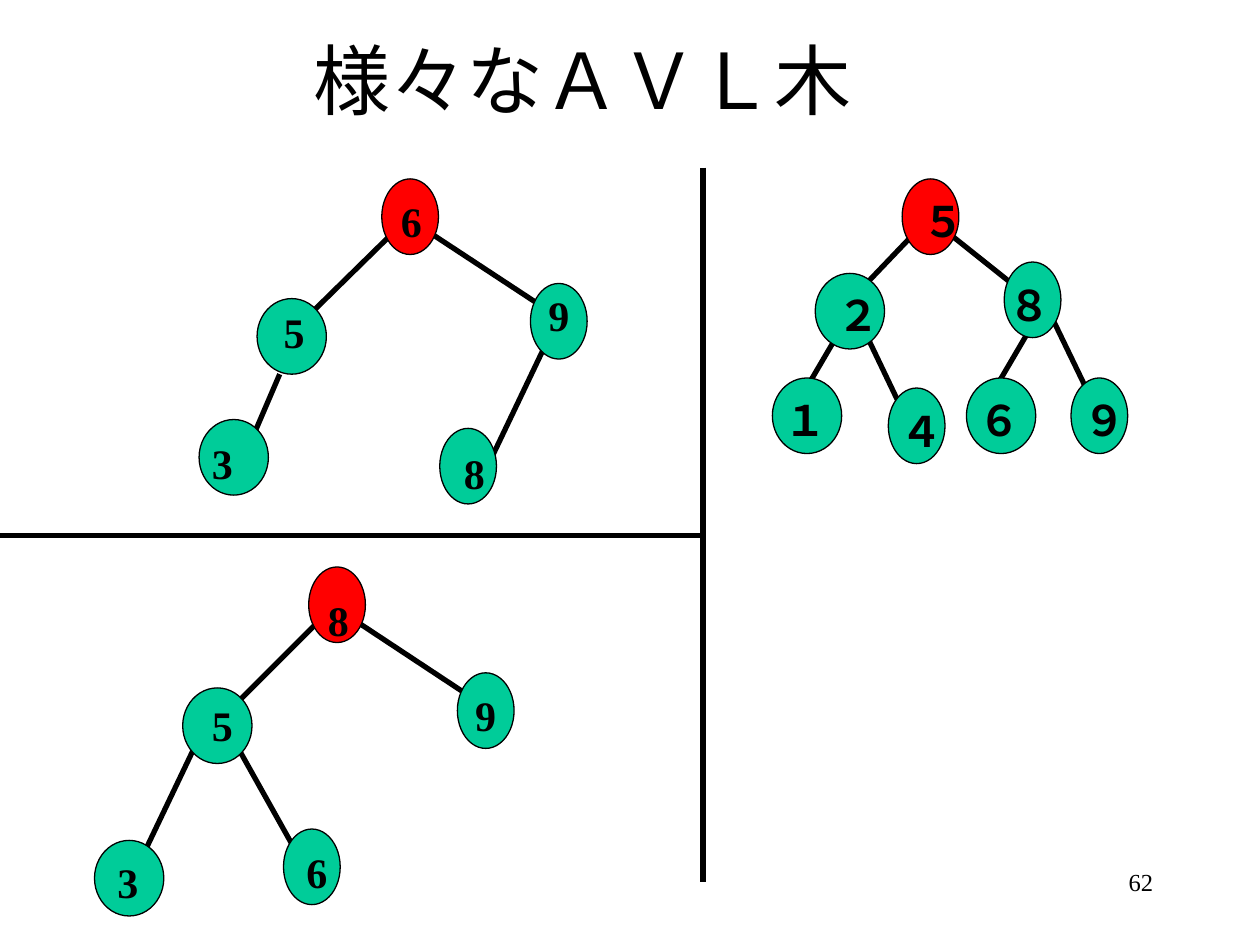
from dataclasses import dataclass

from lxml import etree
from pptx import Presentation
from pptx.dml.color import RGBColor
from pptx.enum.shapes import MSO_CONNECTOR, MSO_SHAPE
from pptx.enum.text import MSO_ANCHOR, MSO_AUTO_SIZE, PP_ALIGN
from pptx.oxml.ns import qn
from pptx.util import Pt

EMU_PER_PX = 9144  # 100 px to the inch
STRAIGHT = MSO_CONNECTOR.STRAIGHT
OVAL = MSO_SHAPE.OVAL
MIDDLE = MSO_ANCHOR.MIDDLE
GROW = MSO_AUTO_SIZE.SHAPE_TO_FIT_TEXT
CENTER, RIGHT = PP_ALIGN.CENTER, PP_ALIGN.RIGHT
TITLE_ONLY = 5
NARROW, WIDE, NODE_HEIGHT = 45, 55, 60
DIGIT_WIDTH, FULLWIDTH_DIGIT_WIDTH, LABEL_HEIGHT = 37, 43, 50


@dataclass(frozen=True)
class Theme:
    font: str = "Times New Roman"
    ink: RGBColor = RGBColor(0, 0, 0)
    root: RGBColor = RGBColor(0xFF, 0, 0)
    node: RGBColor = RGBColor(0, 0xCC, 0x99)
    title_size: int = 44
    key_size: int = 24
    number_size: int = 14
    thick: float = 3
    thin: float = 0.75


@dataclass(frozen=True)
class Node:
    key: str
    left: int
    top: int
    width: int
    label_left: int
    label_top: int
    wrapped_width: int = 0  # a label of this fixed width wraps


def px(*lengths):
    return [length * EMU_PER_PX for length in lengths]


class SlideBuilder:
    def __init__(self, slide, theme):
        self.slide = slide
        self.theme = theme

    def format_paragraph(self, frame, text, size, align, bold=False):
        paragraph = frame.paragraphs[0]
        paragraph.text = text
        paragraph.alignment = align
        font = paragraph.font
        font.name, font.size, font.bold = self.theme.font, Pt(size), bold
        font.color.rgb = self.theme.ink

    def title(self, text, left, top, width, height):
        title = self.slide.shapes.title
        title.left, title.top, title.width, title.height = px(left, top, width, height)
        title.text_frame.vertical_anchor = MIDDLE
        self.format_paragraph(title.text_frame, text, self.theme.title_size, CENTER)

    def text(self, text, box, size, align, bold=False, wrap=True, grow=False):
        frame = self.slide.shapes.add_textbox(*px(*box)).text_frame
        frame.word_wrap = wrap
        if grow:
            frame.auto_size = GROW
        self.format_paragraph(frame, text, size, align, bold)

    def line(self, x1, y1, x2, y2):
        line = self.slide.shapes.add_connector(STRAIGHT, *px(x1, y1, x2, y2))
        line.line.color.rgb = self.theme.ink
        line.line.width = Pt(self.theme.thick)
        etree.SubElement(line._element.spPr, qn("a:effectLst"))

    def ellipse(self, node, fill):
        ellipse = self.slide.shapes.add_shape(
            OVAL, *px(node.left, node.top, node.width, NODE_HEIGHT))
        ellipse.shadow.inherit = False
        ellipse.fill.solid()
        ellipse.fill.fore_color.rgb = fill
        ellipse.line.color.rgb = self.theme.ink
        ellipse.line.width = Pt(self.theme.thin)

    def key(self, node):
        natural = DIGIT_WIDTH if node.key.isascii() else FULLWIDTH_DIGIT_WIDTH
        box = (node.label_left, node.label_top,
               node.wrapped_width or natural, LABEL_HEIGHT)
        self.text(node.key, box, self.theme.key_size, CENTER, bold=True,
                  wrap=bool(node.wrapped_width), grow=True)

    def tree(self, nodes, edges):
        """Draw edges below nodes and keys on top; the first node is the root."""
        for edge in edges:
            self.line(*edge)
        for node in nodes:
            self.ellipse(node, self.theme.root if node is nodes[0] else self.theme.node)
        for node in nodes:
            self.key(node)


TREES = [
    ([Node("6", 303, 142, NARROW, 308, 150),
      Node("5", 204, 237, WIDE, 215, 238),
      Node("9", 421, 225, NARROW, 425, 225),
      Node("3", 158, 333, WIDE, 158, 342),
      Node("8", 349, 340, NARROW, 358, 350)],
     [(376, 393, 439, 261), (439, 249, 331, 178),
      (222, 273, 331, 166), (186, 381, 222, 297)]),
    ([Node("8", 245, 450, NARROW, 250, 467),
      Node("5", 145, 546, WIDE, 158, 550, DIGIT_WIDTH),
      Node("9", 363, 534, NARROW, 367, 542),
      Node("3", 75, 667, WIDE, 83, 675),
      Node("6", 225, 658, NARROW, 233, 667)],
     [(239, 683, 183, 583), (100, 707, 163, 575),
      (381, 558, 272, 486), (164, 582, 272, 474)]),
    ([Node("５", 716, 142, NARROW, 722, 150),
      Node("８", 797, 208, NARROW, 788, 217, 58),
      Node("１", 613, 300, WIDE, 613, 308),
      Node("４", 705, 308, NARROW, 705, 317),
      Node("２", 647, 217, WIDE, 655, 225),
      Node("６", 767, 300, WIDE, 767, 308),
      Node("９", 850, 300, NARROW, 850, 308)],
     [(780, 325, 824, 250), (724, 342, 680, 250), (874, 333, 830, 242),
      (813, 233, 744, 178), (680, 233, 744, 166), (630, 325, 674, 250)]),
]
DIVIDERS = [(558, 133, 558, 700), (0, 425, 558, 425)]


def main():
    deck = Presentation()
    deck.slide_width, deck.slide_height = px(1000, 750)
    theme = Theme()
    builder = SlideBuilder(
        deck.slides.add_slide(deck.slide_layouts[TITLE_ONLY]), theme)
    builder.title("様々なＡＶＬ木", 0, 0, 925, 125)
    builder.text("62", (717, 683, 208, 50), theme.number_size, RIGHT)
    for divider in DIVIDERS:
        builder.line(*divider)
    for nodes, edges in TREES:
        builder.tree(nodes, edges)
    deck.save("out.pptx")


if __name__ == "__main__":
    main()
